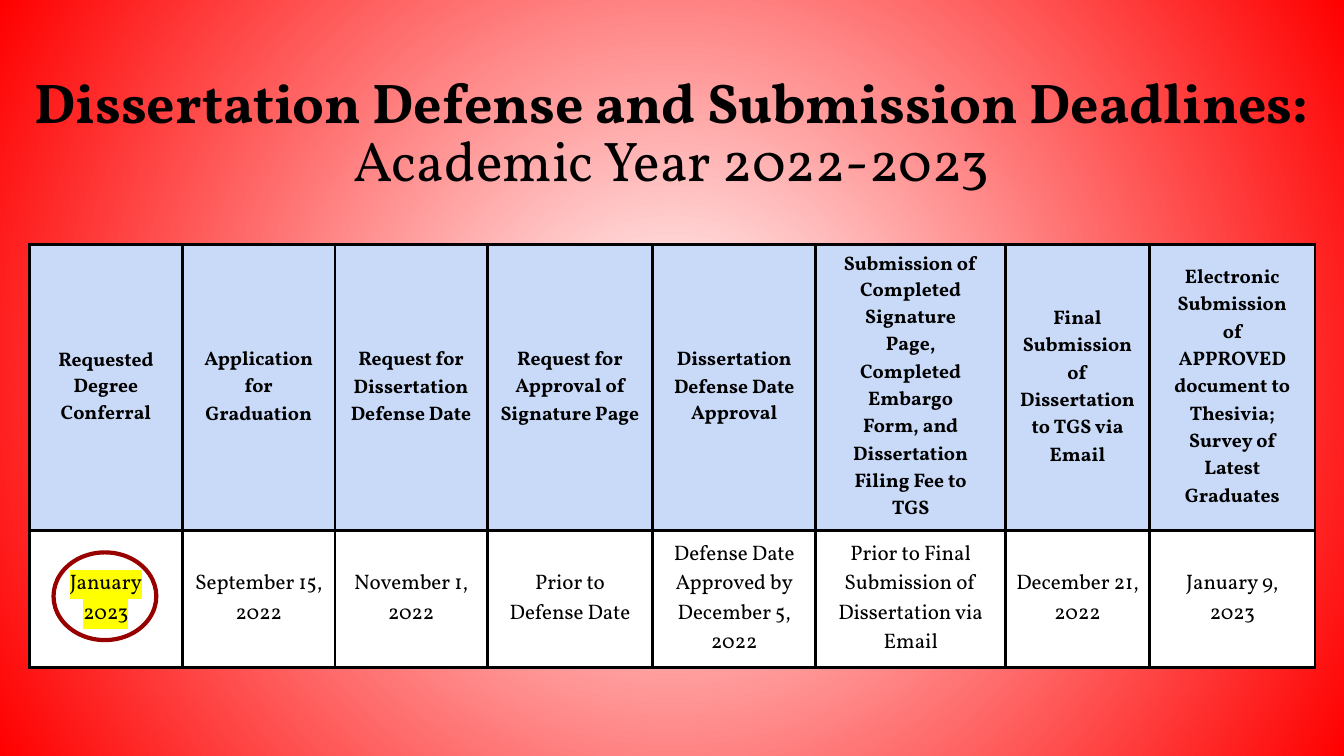
"""Build the dissertation deadlines slide."""
import pptx
import pptx.dml.color
import pptx.enum.shapes
import pptx.enum.text
import pptx.oxml
import pptx.oxml.ns
import pptx.util
from pptx.util import Cm, Pt

FONT = "Vollkorn"
HEADING = ["Dissertation Defense and Submission Deadlines:", "Academic Year 2022-2023"]
DEADLINES = [
    (3.86, "Requested Degree\nConferral", "January\n2023"),
    (3.84, "Application for\nGraduation", "September 15, 2022"),
    (3.84, "Request for\nDissertation\nDefense Date", "November 1, 2022"),
    (4.17, "Request for\nApproval of\nSignature Page", "Prior to\nDefense Date"),
    (4.11, "Dissertation\nDefense Date\nApproval",
     "Defense Date Approved by\nDecember 5, 2022"),
    (4.78, "Submission of Completed\nSignature\nPage,\nCompleted\nEmbargo\nForm, and\n"
           "Dissertation\nFiling Fee to\nTGS",
     "Prior to Final Submission of Dissertation via Email"),
    (3.63, "Final Submission of Dissertation to TGS via Email", "December 21, 2022"),
    (4.17, "Electronic\nSubmission\nof\nAPPROVED\ndocument to\nThesivia;\nSurvey of\n"
           "Latest\nGraduates", "January 9,\n2023"),
]
TIGHT_LINES = {"Requested Degree", "Defense Date", "Submission of Completed"}
ROWS = [(7.14, "C9DAF8", 14, True), (3.45, "FFFFFF", 15, False)]
TABLE_LEFT, TABLE_TOP = 0.74, 6.17
CELL_MARGIN = 0.18


def rgb(code):
    return pptx.dml.color.RGBColor.from_string(code)


def drawing_xml(tag, body="", attributes=""):
    return pptx.oxml.parse_xml(
        f'<a:{tag} {pptx.oxml.ns.nsdecls("a")} {attributes}>{body}</a:{tag}>')


def write_lines(frame, lines, size, bold_flags):
    frame.text = "\n".join(lines)
    for paragraph, bold in zip(frame.paragraphs, bold_flags):
        paragraph.alignment = pptx.enum.text.PP_ALIGN.CENTER
        paragraph.font.name = FONT
        paragraph.font.size = Pt(size)
        paragraph.font.bold = bold
        paragraph.font.color.rgb = rgb("000000")


def paint_background(slide):
    fill = slide.background.fill
    fill.gradient()
    for stop, (position, color) in zip(fill.gradient_stops, [(0, "FFFFFF"), (1, "FF0000")]):
        stop.position = position
        stop.color.rgb = rgb(color)
    direction = slide.element.find(".//" + pptx.oxml.ns.qn("a:lin"))
    center = '<a:fillToRect l="50000" t="50000" r="50000" b="50000"/>'
    direction.getparent().replace(direction, drawing_xml("path", center, 'path="circle"'))


def add_heading(slide):
    title = slide.shapes.title
    title.left, title.top, title.width, title.height = Cm(0.48), Cm(1.9), Cm(32.89), Cm(3.45)
    frame = title.text_frame
    frame.margin_left = frame.margin_right = frame.margin_bottom = 0
    frame.margin_top = Cm(0.03)
    frame.word_wrap = True
    frame.auto_size = pptx.enum.text.MSO_AUTO_SIZE.NONE
    frame.vertical_anchor = pptx.enum.text.MSO_ANCHOR.TOP
    write_lines(frame, HEADING, 40, [True, False])
    for paragraph in frame.paragraphs:
        paragraph.line_spacing = 0.87


def fill_cell(cell, text, color, size, bold):
    cell.fill.solid()
    cell.fill.fore_color.rgb = rgb(color)
    cell.vertical_anchor = pptx.enum.text.MSO_ANCHOR.MIDDLE
    cell.margin_left = cell.margin_right = Cm(CELL_MARGIN)
    cell.margin_top = cell.margin_bottom = Cm(CELL_MARGIN)
    lines = text.split("\n")
    write_lines(cell.text_frame, lines, size, [bold] * len(lines))
    for paragraph in cell.text_frame.paragraphs:
        if bold and paragraph.text in TIGHT_LINES:
            paragraph.line_spacing = 0.96
    properties = cell.fill._xPr
    stroke = '<a:solidFill><a:srgbClr val="000000"/></a:solidFill>'
    for index, side in enumerate(["lnL", "lnR", "lnT", "lnB"]):
        properties.insert(index, drawing_xml(side, stroke, f'w="{Pt(2.25)}"'))


def add_deadlines(slide):
    width = sum(column[0] for column in DEADLINES)
    height = sum(row[0] for row in ROWS)
    table = slide.shapes.add_table(len(ROWS), len(DEADLINES), Cm(TABLE_LEFT), Cm(TABLE_TOP),
                                   Cm(width), Cm(height)).table
    table.first_row = table.horz_banding = False
    for row, (row_height, *_) in zip(table.rows, ROWS):
        row.height = Cm(row_height)
    for c, (column_width, *texts) in enumerate(DEADLINES):
        table.columns[c].width = Cm(column_width)
        for r, (text, (_, color, size, bold)) in enumerate(zip(texts, ROWS)):
            fill_cell(table.cell(r, c), text, color, size, bold)
    for paragraph in table.cell(1, 0).text_frame.paragraphs:
        run_properties = paragraph.runs[0].font._element
        run_properties.append(drawing_xml("highlight", '<a:srgbClr val="FFFF00"/>'))


def circle_conferral(slide):
    ring = slide.shapes.add_shape(pptx.enum.shapes.MSO_SHAPE.OVAL,
                                  Cm(1.35), Cm(13.92), Cm(2.59), Cm(2.21))
    ring.shadow.inherit = False
    ring.fill.background()
    ring.line.color.rgb = rgb("980000")
    ring.line.width = Pt(3)


def main():
    deck = pptx.Presentation()
    deck.slide_width, deck.slide_height = Cm(33.87), Cm(19.05)
    slide = deck.slides.add_slide(deck.slide_layouts[5])
    paint_background(slide)
    add_heading(slide)
    add_deadlines(slide)
    circle_conferral(slide)
    deck.save("out.pptx")


if __name__ == "__main__":
    main()
